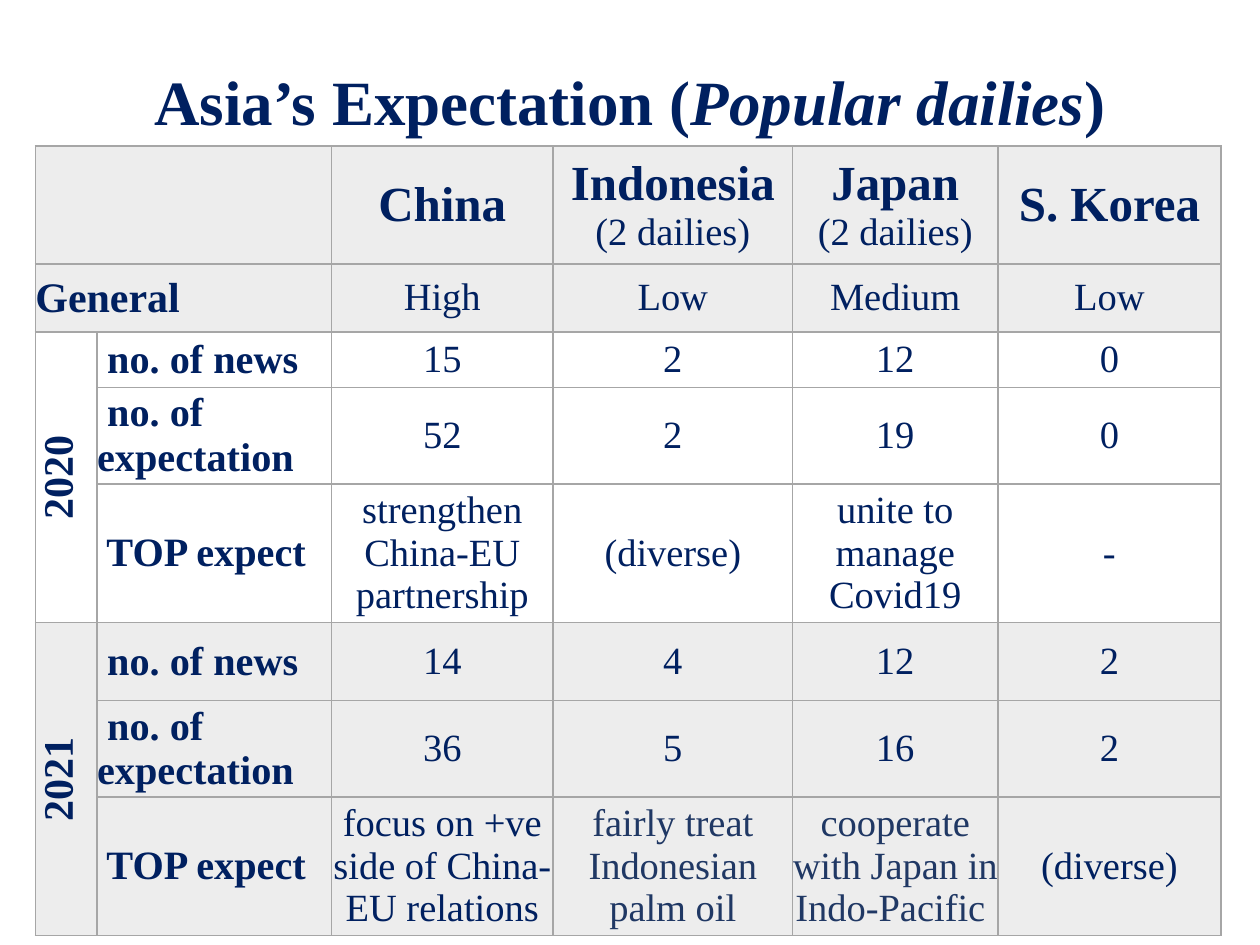
from lxml import etree
from pptx import Presentation
from pptx import util as u
from pptx.dml.color import RGBColor
from pptx.enum import text as t
from pptx.oxml import ns

Pt = u.Pt
HUES = {"navy": "002060", "slate": "203864", "edge": "A6A6A6",
        "band": "EDEDED", "plain": "FFFFFF"}


def write(par, words, size=22, bold=False, italic=False, hue="navy",
          align=t.PP_ALIGN.CENTER):
    par.alignment = align
    run = par.add_run()
    run.text = words
    font = run.font
    font.name = "Times New Roman"
    font.size, font.bold, font.italic = Pt(size), bold, italic
    font.color.rgb = RGBColor.from_string(HUES[hue])


def edge(cell):
    """Draw a thin grey line on all four sides of a table cell."""
    props = cell._tc.get_or_add_tcPr()
    for side in ("a:lnL", "a:lnR", "a:lnT", "a:lnB"):
        line = etree.SubElement(props, ns.qn(side), w=str(Pt(1)))
        fill = etree.SubElement(line, ns.qn("a:solidFill"))
        etree.SubElement(fill, ns.qn("a:srgbClr"), val=HUES["edge"])


deck = Presentation()
deck.slide_width, deck.slide_height = Pt(720), Pt(540)
slide = deck.slides.add_slide(deck.slide_layouts[6])

# Title
box = slide.shapes.add_textbox(Pt(49.7), Pt(20.2), Pt(620.6), Pt(80))
frame = box.text_frame
frame.word_wrap = True
frame.vertical_anchor = t.MSO_ANCHOR.MIDDLE
title = frame.paragraphs[0]
title.line_spacing = 0.9
write(title, "Asia’s Expectation (", size=36, bold=True)
write(title, "Popular dailies", size=36, bold=True, italic=True)
write(title, ")", size=36, bold=True)

# Table grid
cols = [35.3, 133.9, 126.7, 136.8, 117.4, 127.4]
rows = [65.5, 38.9, 31.7, 53.3, 77, 44.6, 53.3, 73]
grid = slide.shapes.add_table(len(rows), len(cols), Pt(20.2), Pt(83.5),
                              Pt(sum(cols)), Pt(sum(rows))).table
for col, width in zip(grid.columns, cols):
    col.width = Pt(width)
for row, height in zip(grid.rows, rows):
    row.height = Pt(height)

for r in range(len(rows)):
    for c in range(len(cols)):
        cell = grid.cell(r, c)
        edge(cell)
        cell.fill.solid()
        tone = "plain" if 2 <= r <= 4 else "band"
        cell.fill.fore_color.rgb = RGBColor.from_string(HUES[tone])
        cell.vertical_anchor = t.MSO_ANCHOR.MIDDLE
        if r > 0:
            cell.margin_left = cell.margin_right = 0
            cell.margin_top = cell.margin_bottom = 0

for first, last in [((0, 0), (0, 1)), ((1, 0), (1, 1)),
                    ((2, 0), (4, 0)), ((5, 0), (7, 0))]:
    grid.cell(*first).merge(grid.cell(*last))

# Country heads
heads = [("China", ""), ("Indonesia", "(2 dailies)"),
         ("Japan", "(2 dailies)"), ("S. Korea", "")]
for c, (name, note) in enumerate(heads, 2):
    frame = grid.cell(0, c).text_frame
    write(frame.paragraphs[0], name, size=28, bold=True)
    if note:
        write(frame.add_paragraph(), note)

# Row labels
left = t.PP_ALIGN.LEFT
write(grid.cell(1, 0).text_frame.paragraphs[0], "General",
      size=24, bold=True, align=left)
labels = [" no. of news", " no. of expectation", " TOP expect"]
for top, year in [(2, "2020"), (5, "2021")]:
    cell = grid.cell(top, 0)
    cell._tc.get_or_add_tcPr().set("vert", "vert270")
    write(cell.text_frame.paragraphs[0], year, size=24, bold=True)
    for r, label in enumerate(labels, top):
        write(grid.cell(r, 1).text_frame.paragraphs[0], label,
              size=23, bold=True, align=left)

# Findings by country
facts = [
    ["High", "Low", "Medium", "Low"],
    ["15", "2", "12", "0"],
    ["52", "2", "19", "0"],
    ["strengthen China-EU partnership", "(diverse)",
     "unite to manage Covid19", "-"],
    ["14", "4", "12", "2"],
    ["36", "5", "16", "2"],
    ["focus on +ve side of China-EU relations",
     "fairly treat Indonesian palm oil",
     "cooperate with Japan in Indo-Pacific ", "(diverse)"],
]
for r, line in enumerate(facts, 1):
    for c, fact in enumerate(line, 2):
        hue = "slate" if r == 7 and c in (3, 4) else "navy"
        write(grid.cell(r, c).text_frame.paragraphs[0], fact, hue=hue)

deck.save("out.pptx")
